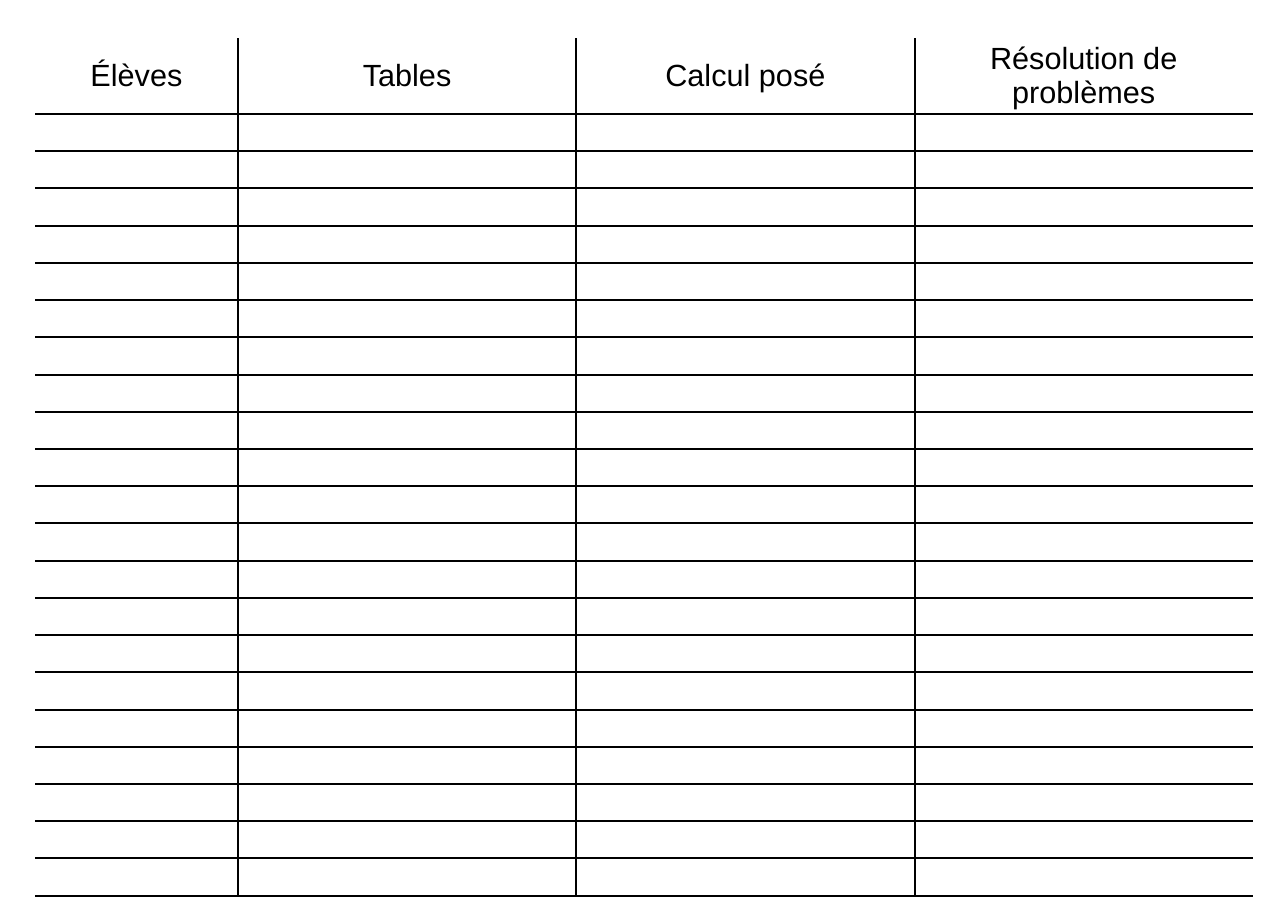
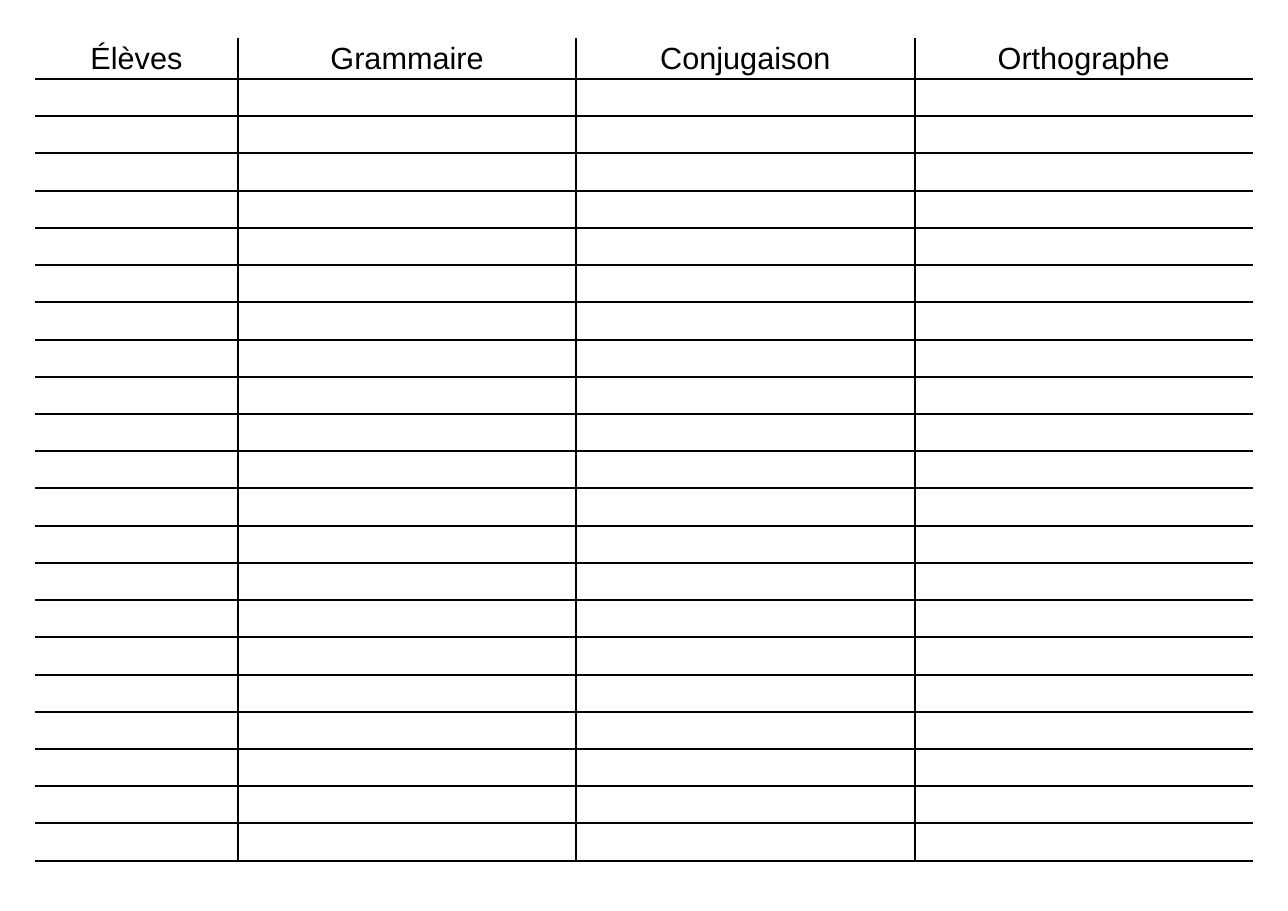
from lxml.etree import SubElement
from pptx import Presentation
from pptx.dml.color import RGBColor
from pptx.enum.text import MSO_ANCHOR, PP_ALIGN
from pptx.oxml.ns import qn
from pptx.util import Emu, Pt

EMU_PER_PX = 914400 / 110.2
SLIDE_WIDTH, SLIDE_HEIGHT = 1288, 911
COLORS = {"paper": "FFFFFF", "ink": "000000"}
NO_GRID_STYLE = "{2D5ABB26-0587-4C30-8999-92F81FD0307C}"

TABLE_LEFT, TABLE_TOP = 35, 38
STUDENT_WIDTH, SUBJECTS_WIDTH = 203, 1015
STUDENT_COUNT, STUDENTS_HEIGHT = 21, 782
GRIDS = [
    (76, ["Élèves", "Tables", "Calcul posé", "Résolution de problèmes"]),
    (41, ["Élèves", "Grammaire", "Conjugaison", "Orthographe"]),
]


def px(length):
    return Emu(round(length * EMU_PER_PX))


class Deck:
    font = "Arial"
    heading_size = Pt(20)
    line_width = Pt(1.5)
    heading_margin = 3

    def __init__(self):
        self.presentation = Presentation()
        self.presentation.slide_width = px(SLIDE_WIDTH)
        self.presentation.slide_height = px(SLIDE_HEIGHT)
        self.slide = None

    def add_slide(self):
        self.slide = self.presentation.slides.add_slide(
            self.presentation.slide_layouts[6])

    def add_grid(self, heading_height, headings):
        """Add a table with a heading row and empty rows, ruled on its inner and bottom edges."""
        row_count, column_count = STUDENT_COUNT + 1, len(headings)
        frame = self.slide.shapes.add_table(
            row_count, column_count, px(TABLE_LEFT), px(TABLE_TOP),
            px(STUDENT_WIDTH + SUBJECTS_WIDTH), px(heading_height + STUDENTS_HEIGHT))
        table = frame.table
        table.first_row = table.horz_banding = False
        table._tbl.tblPr.find(qn("a:tableStyleId")).text = NO_GRID_STYLE

        subject_width = SUBJECTS_WIDTH / (column_count - 1)
        for index, column in enumerate(table.columns):
            column.width = px(subject_width if index else STUDENT_WIDTH)
        for index, row in enumerate(table.rows):
            row.height = px(STUDENTS_HEIGHT / STUDENT_COUNT if index else heading_height)
            for position, cell in enumerate(row.cells):
                self.style_cell(cell, {
                    "L": position > 0,
                    "R": position < column_count - 1,
                    "T": index > 0,
                    "B": True,
                }, 0 if index else self.heading_margin)
        for cell, heading in zip(table.rows[0].cells, headings):
            self.write_heading(cell, heading)

    def style_cell(self, cell, ruled_sides, margin):
        cell.margin_left = cell.margin_right = px(margin)
        cell.margin_top = cell.margin_bottom = px(margin)
        cell.vertical_anchor = MSO_ANCHOR.MIDDLE
        properties = cell._tc.get_or_add_tcPr()
        for side, ruled in ruled_sides.items():
            line = SubElement(properties, qn(f"a:ln{side}"), w=str(self.line_width))
            if ruled:
                fill = SubElement(line, qn("a:solidFill"))
                SubElement(fill, qn("a:srgbClr"), val=COLORS["ink"])
            else:
                SubElement(line, qn("a:noFill"))
        cell.fill.solid()
        cell.fill.fore_color.rgb = RGBColor.from_string(COLORS["paper"])

    def write_heading(self, cell, text):
        paragraph = cell.text_frame.paragraphs[0]
        paragraph.alignment = PP_ALIGN.CENTER
        run = paragraph.add_run()
        run.text = text
        run.font.name = self.font
        run.font.size = self.heading_size
        run.font.color.rgb = RGBColor.from_string(COLORS["ink"])


def main():
    deck = Deck()
    for heading_height, headings in GRIDS:
        deck.add_slide()
        deck.add_grid(heading_height, headings)
    deck.presentation.save("out.pptx")


if __name__ == "__main__":
    main()
